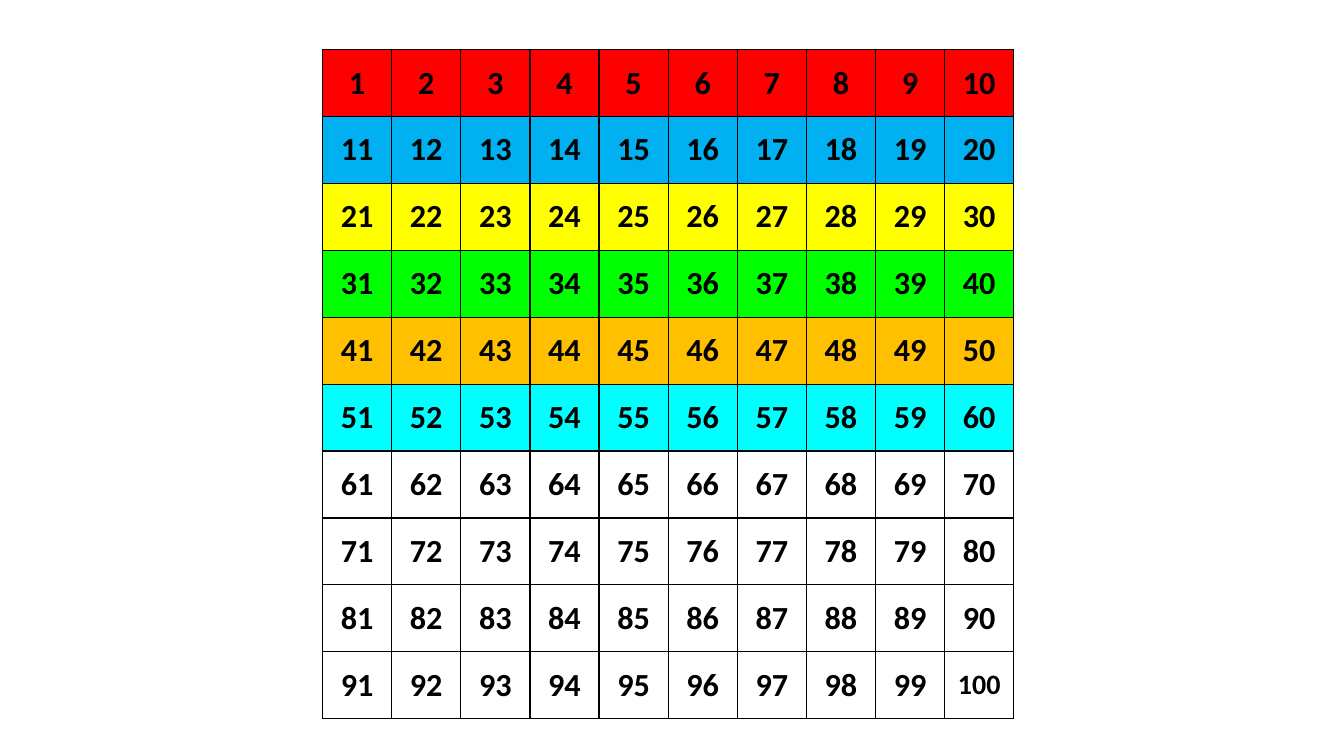
from lxml import etree
from pptx import Presentation
from pptx.dml.color import RGBColor
from pptx.enum.text import MSO_ANCHOR, PP_ALIGN
from pptx.oxml.ns import qn
from pptx.util import Pt

MIDDLE = MSO_ANCHOR.MIDDLE
CENTER = PP_ALIGN.CENTER
SIDES = ("a:lnL", "a:lnR", "a:lnT", "a:lnB")
GRID_SIZE = 10
ROW_FILLS = ["FF0000", "00B0F0", "FFFF00", "00FF00", "FFC000", "00FFFF"] + [None] * 4


def color(hex_string):
    return RGBColor.from_string(hex_string)


class NumberSquare:
    """Draws a bordered grid of numbers on the current slide."""

    font_name = "Calibri"
    ink = "000000"
    font_size = 23
    small_size = 20
    border_width = 1
    side_margin = 9.2
    end_margin = 4.6

    def __init__(self, slide):
        self.slide = slide

    def grid(self, left, top, column_width, row_height):
        frame = self.slide.shapes.add_table(
            GRID_SIZE, GRID_SIZE, Pt(left), Pt(top),
            Pt(column_width * GRID_SIZE), Pt(row_height * GRID_SIZE))
        table = frame.table
        table.first_row = False
        table.horz_banding = False
        for column in table.columns:
            column.width = Pt(column_width)
        for row_index, row in enumerate(table.rows):
            row.height = Pt(row_height)
            for column_index, cell in enumerate(row.cells):
                number = row_index * GRID_SIZE + column_index + 1
                self.cell(cell, number, ROW_FILLS[row_index])

    def cell(self, cell, number, fill):
        cell.margin_left = cell.margin_right = Pt(self.side_margin)
        cell.margin_top = cell.margin_bottom = Pt(self.end_margin)
        cell.vertical_anchor = MIDDLE
        self.borders(cell)
        if fill:
            cell.fill.solid()
            cell.fill.fore_color.rgb = color(fill)
        else:
            cell.fill.background()
        cell.text_frame.text = str(number)
        paragraph = cell.text_frame.paragraphs[0]
        paragraph.alignment = CENTER
        font = paragraph.runs[0].font
        font.name = self.font_name
        font.size = Pt(self.small_size if number >= 100 else self.font_size)
        font.bold = True
        font.color.rgb = color(self.ink)

    def borders(self, cell):
        properties = cell._tc.get_or_add_tcPr()
        for side in SIDES:
            line = etree.SubElement(properties, qn(side), w=str(Pt(self.border_width)))
            fill = etree.SubElement(line, qn("a:solidFill"))
            etree.SubElement(fill, qn("a:srgbClr"), val=self.ink)


def main():
    presentation = Presentation()
    presentation.slide_width = Pt(960)
    presentation.slide_height = Pt(540)
    slide = presentation.slides.add_slide(presentation.slide_layouts[6])
    NumberSquare(slide).grid(230.4, 35.4, 49.38, 47.8)
    presentation.save("out.pptx")


if __name__ == "__main__":
    main()
